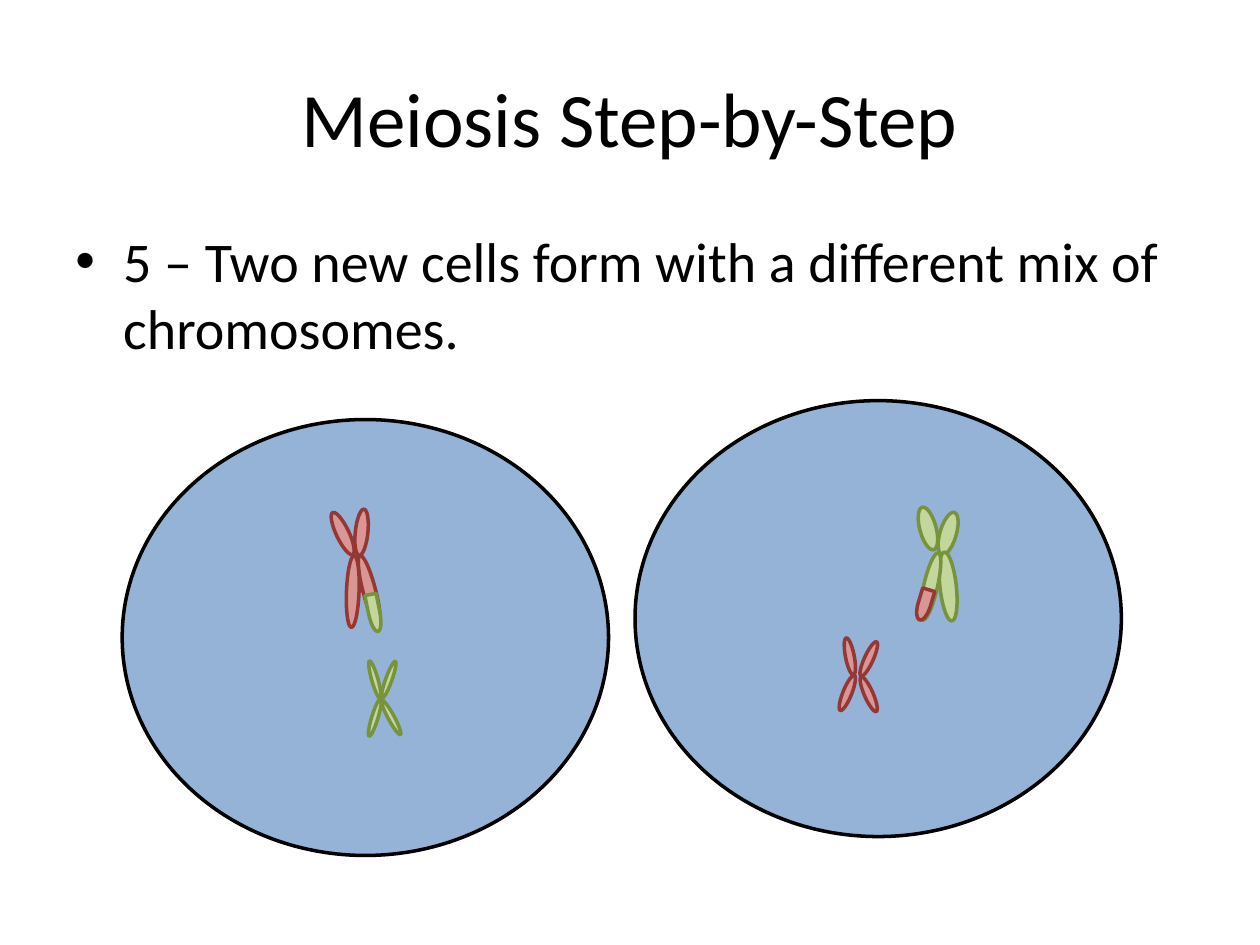
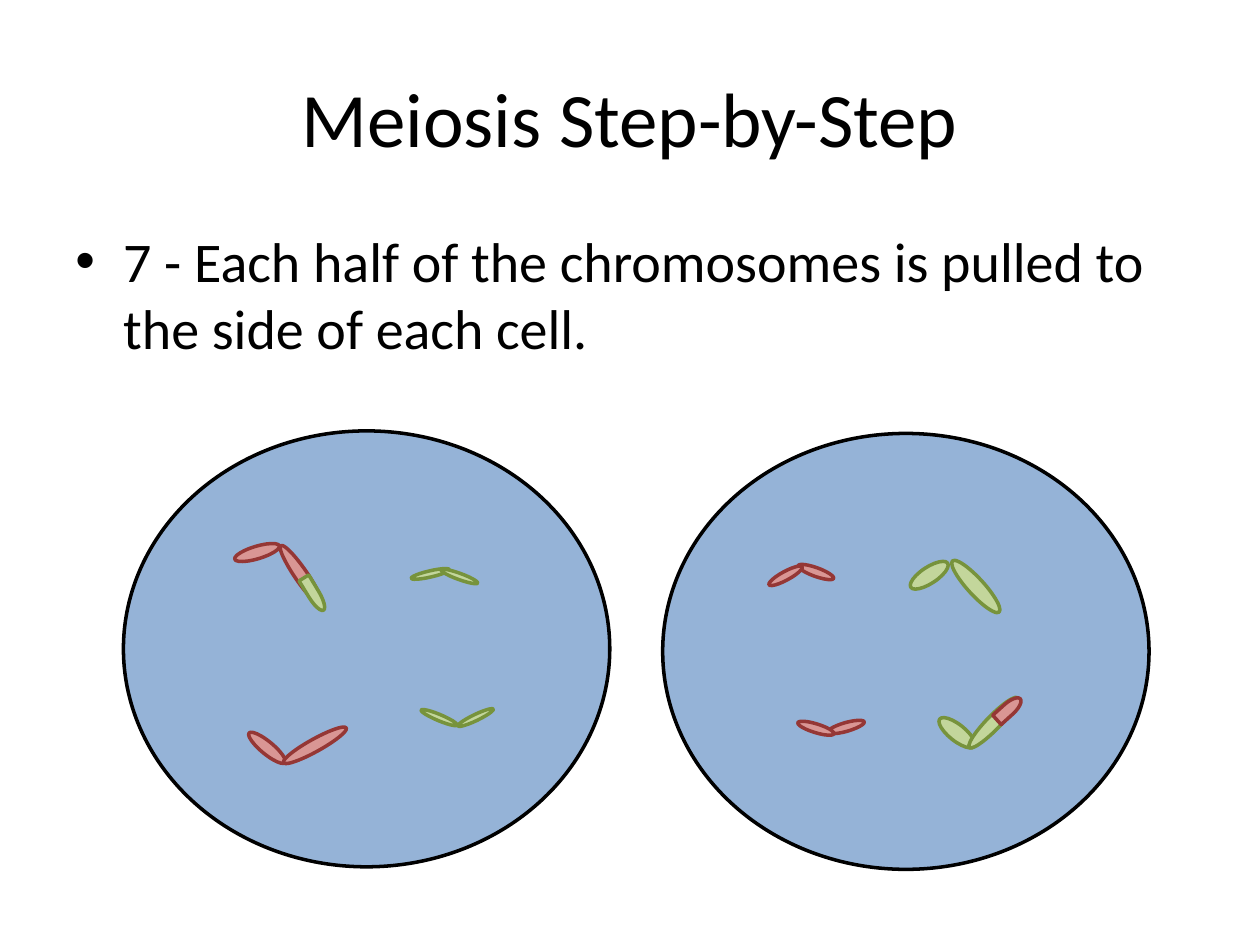
from lxml.etree import SubElement
from pptx import Presentation
from pptx.dml.color import RGBColor
from pptx.enum.shapes import MSO_SHAPE as Shape
from pptx.enum.text import MSO_ANCHOR as Anchor, PP_ALIGN as Align
from pptx.oxml.ns import qn
from pptx.util import Inches, Pt

RED = ("D99694", "953735")
GREEN = ("C3D69B", "77933C")
CELL = ("95B3D7", "000000")
PARTS = {
    "green small": (GREEN, 0.05, 0.31, Shape.OVAL),
    "red small": (RED, 0.07, 0.3, Shape.OVAL),
    "red short": (RED, 0.1, 0.37, Shape.OVAL),
    "red long": (RED, 0.1, 0.57, Shape.OVAL),
    "green tip": (GREEN, 0.3, 0.09, Shape.FLOWCHART_DELAY),
    "green short": (GREEN, 0.13, 0.35, Shape.OVAL),
    "green long": (GREEN, 0.13, 0.55, Shape.OVAL),
    "green thin": (GREEN, 0.11, 0.55, Shape.OVAL),
    "red tip": (RED, 0.25, 0.1, Shape.FLOWCHART_DELAY),
}


def color(code):
    return RGBColor.from_string(code)


class Deck:
    font = "Calibri"
    ink = "000000"

    def __init__(self):
        self.show = Presentation()
        self.show.slide_width = Inches(10)
        self.show.slide_height = Inches(7.5)
        self.slide = None

    def page(self, note, left, right, pairs):
        self.slide = self.show.slides.add_slide(self.show.slide_layouts[6])
        self.cell(*right)
        self.title("Meiosis Step-by-Step")
        self.bullet(note)
        self.cell(*left)
        for arms in pairs:
            self.group(arms)

    def text(self, words, top, height, size):
        box = self.slide.shapes.add_textbox(
            Inches(0.5), Inches(top), Inches(9), Inches(height))
        frame = box.text_frame
        frame.word_wrap = True
        frame.text = words
        font = frame.paragraphs[0].runs[0].font
        font.name = self.font
        font.size = Pt(size)
        font.color.rgb = color(self.ink)
        return frame

    def title(self, words):
        frame = self.text(words, 0.3, 1.25, 44)
        frame.vertical_anchor = Anchor.MIDDLE
        frame.paragraphs[0].alignment = Align.CENTER

    def bullet(self, words):
        frame = self.text(words, 1.75, 4.95, 32)
        props = frame.paragraphs[0]._p.get_or_add_pPr()
        props.set("marL", str(Inches(0.38)))
        props.set("indent", str(Inches(-0.38)))
        SubElement(props, qn("a:buFont")).set("typeface", "Arial")
        SubElement(props, qn("a:buChar")).set("char", "•")

    def draw(self, home, kind, left, top, width, height, tint, turn=0):
        shape = home.shapes.add_shape(
            kind, Inches(left), Inches(top), Inches(width), Inches(height))
        fill, line = tint
        shape.shadow.inherit = False
        shape.fill.solid()
        shape.fill.fore_color.rgb = color(fill)
        shape.line.color.rgb = color(line)
        shape.line.width = Pt(2)
        shape.rotation = turn

    def cell(self, left, top):
        self.draw(self.slide, Shape.OVAL, left, top, 3.86, 3.46, CELL)

    def group(self, arms):
        group = self.slide.shapes.add_group_shape()
        for part, left, top, turn in arms:
            tint, width, height, kind = PARTS[part]
            self.draw(group, kind, left, top, width, height, tint, turn)


def main():
    deck = Deck()
    deck.page(
        "5 – Two new cells form with a different mix of chromosomes.",
        (0.97, 3.33), (5.04, 3.18),
        [
            [("green small", 2.95, 5.24, 344.1),
             ("green small", 3.06, 5.24, 19.8),
             ("green small", 2.95, 5.54, 17.1),
             ("green small", 3.08, 5.54, 331.6)],
            [("red small", 6.71, 5.06, 348.9),
             ("red small", 6.86, 5.08, 24.6),
             ("red small", 6.69, 5.35, 21.9),
             ("red small", 6.86, 5.36, 336.4)],
            [("red short", 2.67, 4.05, 334.5),
             ("red short", 2.82, 4.04, 5.9),
             ("red long", 2.88, 4.4, 345.4),
             ("red long", 2.75, 4.41, 2.2),
             ("green tip", 2.82, 4.82, 78.5)],
            [("green short", 7.3, 4.02, 344.9),
             ("green short", 7.46, 4.06, 16.3),
             ("green long", 7.46, 4.38, 353.7),
             ("green thin", 7.33, 4.38, 13),
             ("red tip", 7.21, 4.75, 106.8)],
        ])
    deck.page(
        "7 - Each half of the chromosomes is pulled to the side of each cell.",
        (0.98, 3.42), (5.26, 3.44),
        [
            [("green small", 3.39, 4.4, 77),
             ("green small", 3.62, 4.42, 110)],
            [("green small", 3.46, 5.54, 112.7),
             ("green small", 3.75, 5.54, 64.5)],
            [("red small", 6.68, 5.62, 74.1),
             ("red small", 6.44, 5.63, 107.1)],
            [("red small", 6.44, 4.39, 109.8),
             ("red small", 6.2, 4.42, 61.6)],
            [("red short", 2.07, 5.75, 309.5),
             ("red long", 2.45, 5.63, 241)],
            [("red short", 1.99, 4.2, 253.4),
             ("red long", 2.34, 4.28, 325.6),
             ("green tip", 2.34, 4.67, 58.7)],
            [("green short", 7.31, 4.39, 236.8),
             ("green long", 7.68, 4.38, 317.6)],
            [("green short", 7.53, 5.64, 308.5),
             ("green thin", 7.83, 5.46, 224.1),
             ("red tip", 7.88, 5.58, 317.9)],
        ])
    deck.show.save("out.pptx")


if __name__ == "__main__":
    main()
